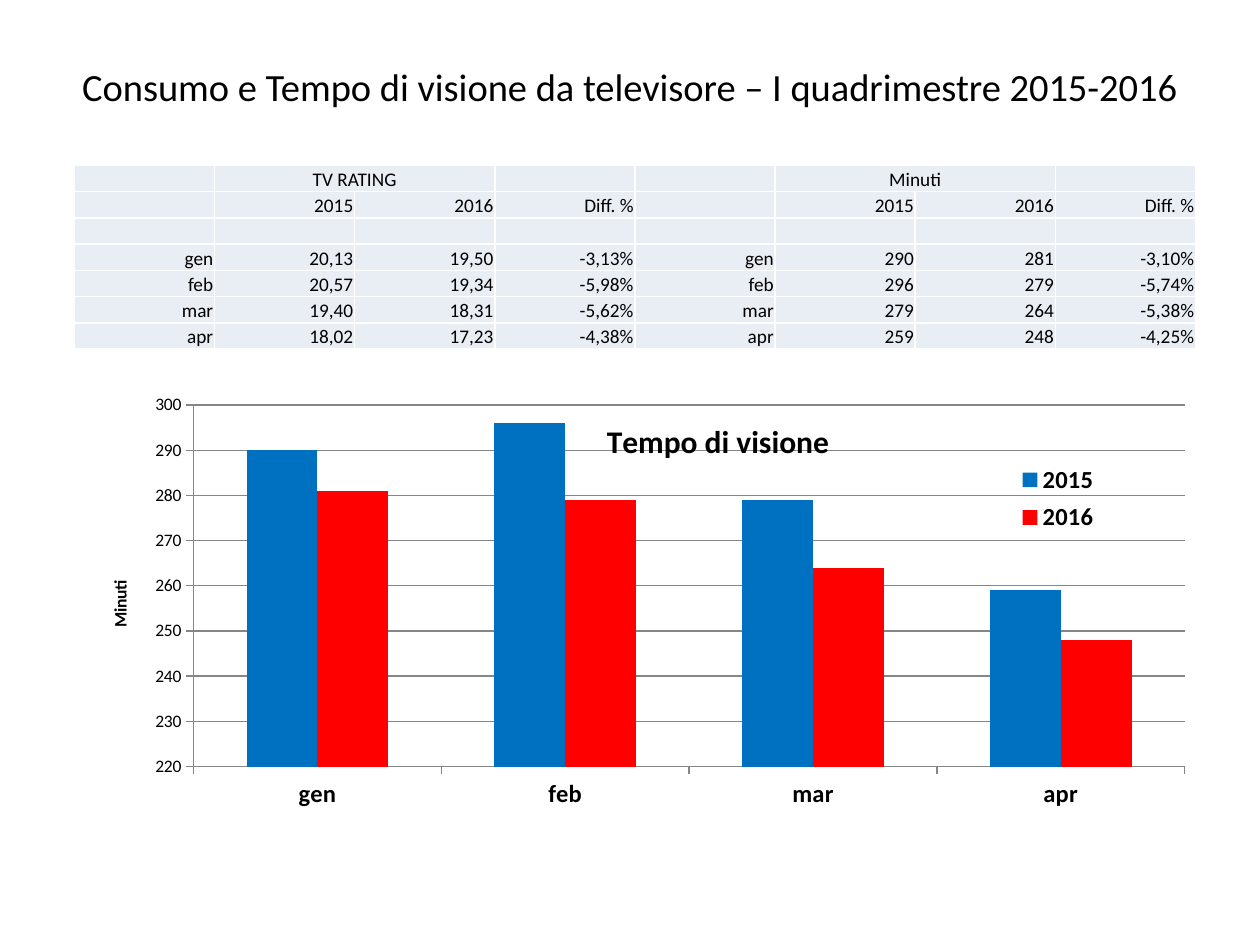
from lxml import etree
from pptx import Presentation
from pptx.chart.data import CategoryChartData
from pptx.dml.color import RGBColor
from pptx.enum import chart as charts, text
from pptx.oxml import parse_xml
from pptx.oxml.ns import qn, nsdecls
from pptx.util import Pt

TITLE = "Consumo e Tempo di visione da televisore – I quadrimestre 2015-2016"
YEARS = ("2015", "2016")
MONTHS = ("gen", "feb", "mar", "apr")
RATING = {
    "title": "TV RATING",
    "rows": [("20,13", "19,50", "-3,13%"), ("20,57", "19,34", "-5,98%"),
             ("19,40", "18,31", "-5,62%"), ("18,02", "17,23", "-4,38%")],
}
MINUTES = {
    "title": "Minuti",
    "rows": [("290", "281", "-3,10%"), ("296", "279", "-5,74%"),
             ("279", "264", "-5,38%"), ("259", "248", "-4,25%")],
}
CHART_TITLE = "Tempo di visione"
THEME = {
    "font": "Calibri", "text": "000000", "cell": "E9EDF4", "border": "FFFFFF",
    "grid": "868686", "series": ("0070C0", "FF0000"),
    "title": 22, "table": 11, "chart_title": 18, "chart_label": 14, "chart": 10,
}
# Left, top, width, height in points
TITLE_BOX = (36, 21.6, 648, 55.4)
TABLE_BOX = (42.5, 94.5, 640.8, 105)
CHART_BOX = (54, 219, 629.3, 249)


def color(name):
    return RGBColor.from_string(name)


def points(box):
    return [Pt(value) for value in box]


def style_font(font, size, bold=False):
    font.name = THEME["font"]
    font.size = Pt(size)
    font.bold = bold
    font.color.rgb = color(THEME["text"])


def add_title(slide):
    title = slide.shapes.title
    title.left, title.top, title.width, title.height = points(TITLE_BOX)
    frame = title.text_frame
    frame.word_wrap = True
    frame.vertical_anchor = text.MSO_ANCHOR.MIDDLE
    paragraph = frame.paragraphs[0]
    paragraph.alignment = text.PP_ALIGN.CENTER
    run = paragraph.add_run()
    run.text = TITLE
    style_font(run.font, THEME["title"])


def block_rows(block):
    """Rows of one half of the table: headings, a blank row, then the months."""
    rows = [("", block["title"], "", ""), ("", *YEARS, "Diff. %"), ("",) * 4]
    return rows + [(month, *values) for month, values in zip(MONTHS, block["rows"])]


def format_cell(cell, content, alignment):
    cell.margin_left = cell.margin_right = cell.margin_top = Pt(0.75)
    cell.margin_bottom = 0
    cell.vertical_anchor = text.MSO_ANCHOR.BOTTOM
    properties = cell._tc.get_or_add_tcPr()
    for side in ("lnL", "lnR", "lnT", "lnB"):
        properties.append(parse_xml(
            f'<a:{side} {nsdecls("a")} w="{Pt(1)}"><a:solidFill>'
            f'<a:srgbClr val="{THEME["border"]}"/></a:solidFill></a:{side}>'))
    cell.fill.solid()
    cell.fill.fore_color.rgb = color(THEME["cell"])
    paragraph = cell.text_frame.paragraphs[0]
    paragraph.alignment = alignment
    if content:
        run = paragraph.add_run()
        run.text = content
        style_font(run.font, THEME["table"])
    else:
        end = etree.SubElement(paragraph._p, qn("a:endParaRPr"))
        end.set("sz", str(THEME["table"] * 100))


def add_table(slide):
    rows = [left + right for left, right in zip(block_rows(RATING), block_rows(MINUTES))]
    columns = len(rows[0])
    table = slide.shapes.add_table(len(rows), columns, *points(TABLE_BOX)).table
    table.first_row = table.horz_banding = False
    for column in table.columns:
        column.width = Pt(TABLE_BOX[2] / columns)
    for row in table.rows:
        row.height = Pt(TABLE_BOX[3] / len(rows))
    for r, row in enumerate(rows):
        alignment = text.PP_ALIGN.RIGHT if r else text.PP_ALIGN.CENTER
        for c, content in enumerate(row):
            format_cell(table.cell(r, c), content, alignment)
    for first in (1, 5):
        table.cell(0, first).merge(table.cell(0, first + 1))


def place(element, x, y, width=None, height=None, inner=False):
    """Give a chart part a fixed place, in fractions of the chart."""
    for old in element.findall(qn("c:layout")):
        element.remove(old)
    parts = [("layoutTarget", "inner")] if inner else []
    parts += [("xMode", "edge"), ("yMode", "edge"), ("x", x), ("y", y)]
    if width:
        parts += [("w", width), ("h", height)]
    inside = "".join(f'<c:{name} val="{value}"/>' for name, value in parts)
    layout = parse_xml(f'<c:layout {nsdecls("c")}><c:manualLayout>{inside}'
                       '</c:manualLayout></c:layout>')
    before = [child for child in element
              if child.tag in (qn("c:tx"), qn("c:legendPos"), qn("c:legendEntry"))]
    element.insert(len(before), layout)


def add_heading(owner, content, size, x, y):
    """Title of the chart or of an axis."""
    heading = owner.chart_title if hasattr(owner, "chart_title") else owner.axis_title
    run = heading.text_frame.paragraphs[0].add_run()
    run.text = content
    style_font(run.font, size, bold=True)
    place(heading._element, x, y)
    return heading


def add_chart(slide):
    data = CategoryChartData()
    data.categories = MONTHS
    for index, year in enumerate(YEARS):
        data.add_series(year, [int(row[index]) for row in MINUTES["rows"]])
    chart = slide.shapes.add_chart(
        charts.XL_CHART_TYPE.COLUMN_CLUSTERED, *points(CHART_BOX), data).chart
    style_font(chart.font, THEME["chart"])

    heading = add_heading(chart, CHART_TITLE, THEME["chart_title"], 0.46, 0.07)
    heading._element.get_or_add_overlay = None
    for old in heading._element.findall(qn("c:overlay")):
        heading._element.remove(old)
    layout = heading._element.find(qn("c:layout"))
    layout.addnext(parse_xml(f'<c:overlay {nsdecls("c")} val="1"/>'))

    plot = chart.plots[0]
    plot.gap_width = 150
    plot.overlap = 0
    plot.vary_by_categories = False
    for series, fill in zip(plot.series, THEME["series"]):
        series.format.fill.solid()
        series.format.fill.fore_color.rgb = color(fill)
    place(chart._chartSpace.chart.plotArea, 0.09, 0.05, 0.9, 0.83, inner=True)

    values, categories = chart.value_axis, chart.category_axis
    values.minimum_scale, values.maximum_scale, values.major_unit = 220, 300, 10
    values.has_major_gridlines = True
    add_heading(values, MINUTES["title"], THEME["chart"], 0.01, 0.445)
    for axis in (values, categories):
        axis.major_tick_mark = charts.XL_TICK_MARK.OUTSIDE
    for line in (values.format.line, categories.format.line,
                 values.major_gridlines.format.line):
        line.color.rgb = color(THEME["grid"])
        line.width = Pt(0.75)
    style_font(values.tick_labels.font, THEME["chart"])
    style_font(categories.tick_labels.font, THEME["chart_label"], bold=True)

    chart.has_legend = True
    chart.legend.position = charts.XL_LEGEND_POSITION.RIGHT
    chart.legend.include_in_layout = False
    style_font(chart.legend.font, THEME["chart_label"], bold=True)
    place(chart.legend._element, 0.83, 0.17, 0.09, 0.19)


def main():
    presentation = Presentation()
    presentation.slide_width, presentation.slide_height = Pt(720), Pt(540)
    slide = presentation.slides.add_slide(presentation.slide_layouts[5])
    add_title(slide)
    add_table(slide)
    add_chart(slide)
    presentation.save("out.pptx")


if __name__ == "__main__":
    main()
